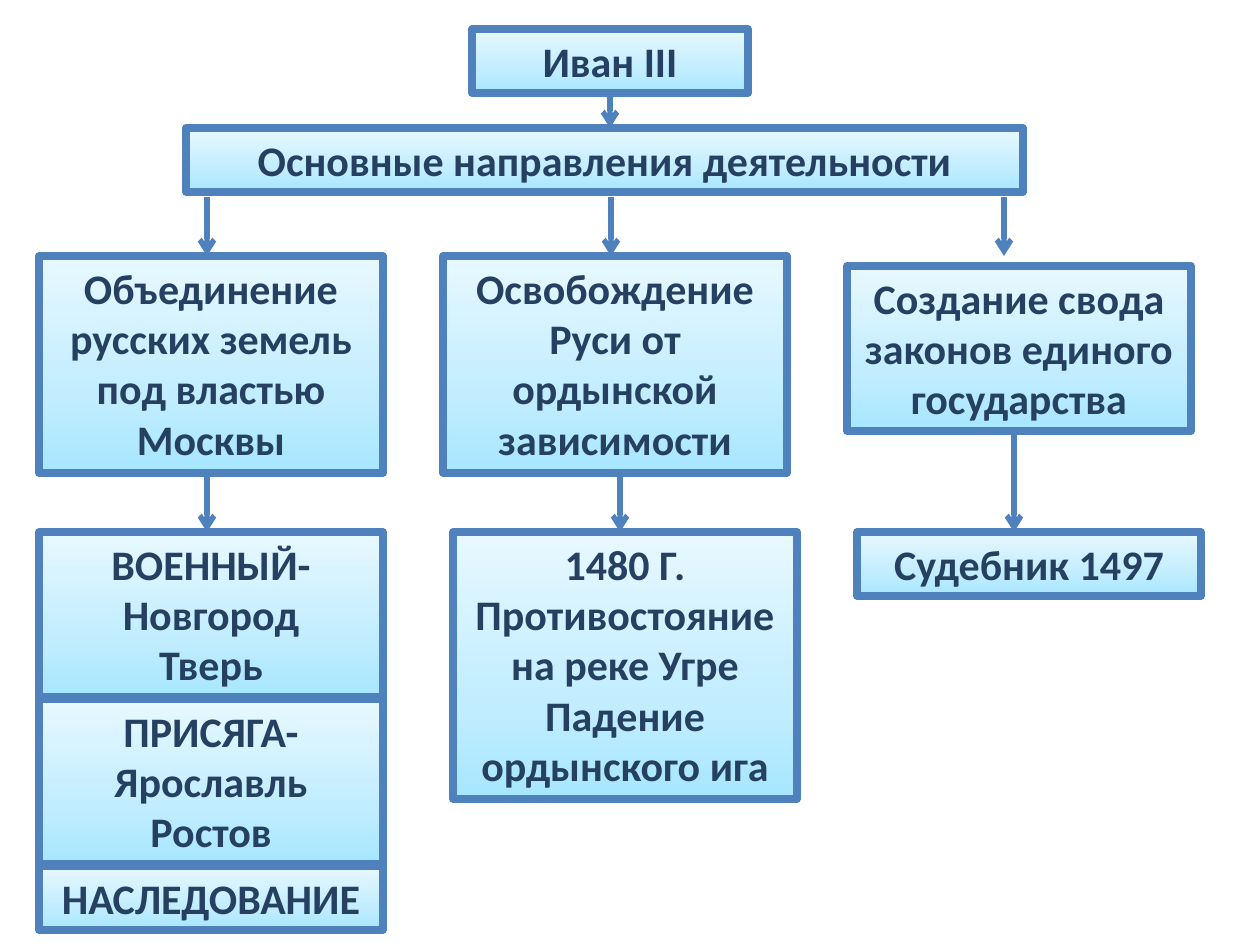
from copy import deepcopy

from lxml.etree import SubElement
from pptx import Presentation
from pptx.dml.color import RGBColor
from pptx.enum.shapes import MSO_CONNECTOR, MSO_SHAPE
from pptx.enum.text import MSO_ANCHOR, MSO_AUTO_SIZE, PP_ALIGN
from pptx.oxml.ns import qn
from pptx.util import Emu, Pt

EMU_PER_PX = 914400 / 126
COLORS = {
    "line": "4F81BD",
    "text": "254061",
    "deep": "A7E6FF",
    "middle": "C1EDFF",
    "pale": "E7F8FF",
}
GRADIENT = [(0, "deep"), (0.35, "middle"), (1, "pale")]
COLUMN_WIDTH = 344
COLUMN_STEP = 404
RESULT_TOP = 335
RESULT_STEP = 167

BRANCHES = [
    {
        "goal": "Объединение русских земель под властью Москвы",
        "goal_top": 59, "goal_height": 217, "entry_x": 168, "exit_x": 168,
        "result_left": 0,
        "results": [
            ("ВОЕННЫЙ- Новгород\nТверь", 165),
            ("ПРИСЯГА-Ярославль\nРостов", 165),
            ("НАСЛЕДОВАНИЕ", 64),
        ],
    },
    {
        "goal": "Освобождение Руси от ордынской зависимости",
        "goal_top": 59, "goal_height": 217, "entry_x": 168, "exit_x": 177,
        "result_left": 10,
        "results": [
            ("1480 Г.\nПротивостояние на реке Угре\nПадение ордынского ига", 267),
        ],
    },
    {
        "goal": "Создание свода законов единого государства",
        "goal_top": 69, "goal_height": 165, "entry_x": 157, "exit_x": 167,
        "result_left": 10,
        "results": [("Судебник 1497", 64)],
    },
]


def px(value):
    """Turn pixels into EMU."""
    return Emu(round(value * EMU_PER_PX))


def color(name):
    """Return a palette colour by name."""
    return RGBColor.from_string(COLORS[name])


def write_text(frame, text, size=24, font="Calibri", ink="text", bold=True,
               align=PP_ALIGN.CENTER):
    """Write one paragraph for each line of text."""
    for index, line in enumerate(text.split("\n")):
        paragraph = frame.add_paragraph() if index else frame.paragraphs[0]
        paragraph.alignment = align
        run = paragraph.add_run()
        run.text = line
        run.font.size = Pt(size)
        run.font.name = font
        run.font.bold = bold
        run.font.color.rgb = color(ink)


def fill_gradient(shape):
    """Fill a shape with the three-stop gradient, palest at the top."""
    shape.fill.gradient()
    shape.fill.gradient_angle = 90
    first_stop = next(shape._element.iter(qn("a:gs")))
    first_stop.addnext(deepcopy(first_stop))
    for stop, (position, name) in zip(shape.fill.gradient_stops, GRADIENT):
        stop.position = position
        stop.color.rgb = color(name)


def add_box(slide, text, left, top, width, height):
    """Add a framed gradient box with centred text."""
    shape = slide.shapes.add_shape(
        MSO_SHAPE.RECTANGLE, px(left), px(top), px(width), px(height))
    shape.shadow.inherit = False
    fill_gradient(shape)
    shape.line.color.rgb = color("line")
    shape.line.width = Pt(4.5)
    frame = shape.text_frame
    frame.word_wrap = True
    frame.auto_size = MSO_AUTO_SIZE.SHAPE_TO_FIT_TEXT
    frame.vertical_anchor = MSO_ANCHOR.TOP
    write_text(frame, text)


def add_arrow(slide, x, top, bottom):
    """Add a downward arrow."""
    connector = slide.shapes.add_connector(
        MSO_CONNECTOR.STRAIGHT, px(x), px(top), px(x), px(bottom))
    connector.line.color.rgb = color("line")
    connector.line.width = Pt(3)
    SubElement(connector.line._get_or_add_ln(), qn("a:tailEnd"), type="arrow")
    SubElement(connector._element.spPr, qn("a:effectLst"))


def add_header(slide, left, top, width):
    """Add the ruler's name above the heading of the scheme."""
    add_box(slide, "Иван III", left + 286, top, 276, 64)
    add_box(slide, "Основные направления деятельности", left, top + 99, width, 64)
    add_arrow(slide, left + 424, top + 64, top + 99)


def add_branch(slide, branch, left, top, width):
    """Add a goal, its arrows and the results stacked below it."""
    goal_top = top + branch["goal_top"]
    goal_bottom = goal_top + branch["goal_height"]
    result_top = top + RESULT_TOP
    add_arrow(slide, left + branch["entry_x"], top, top + 59)
    add_box(slide, branch["goal"], left, goal_top, width, branch["goal_height"])
    add_arrow(slide, left + branch["exit_x"], goal_bottom, result_top)
    for index, (text, height) in enumerate(branch["results"]):
        add_box(slide, text, left + branch["result_left"],
                result_top + index * RESULT_STEP, width, height)


def main():
    """Build and save the presentation."""
    presentation = Presentation()
    presentation.slide_width = px(1260)
    presentation.slide_height = px(945)
    slide = presentation.slides.add_slide(presentation.slide_layouts[6])
    add_header(slide, 186, 29, 837)
    for index, branch in enumerate(BRANCHES):
        add_branch(slide, branch, 39 + index * COLUMN_STEP, 197, COLUMN_WIDTH)
    presentation.save("out.pptx")


if __name__ == "__main__":
    main()
